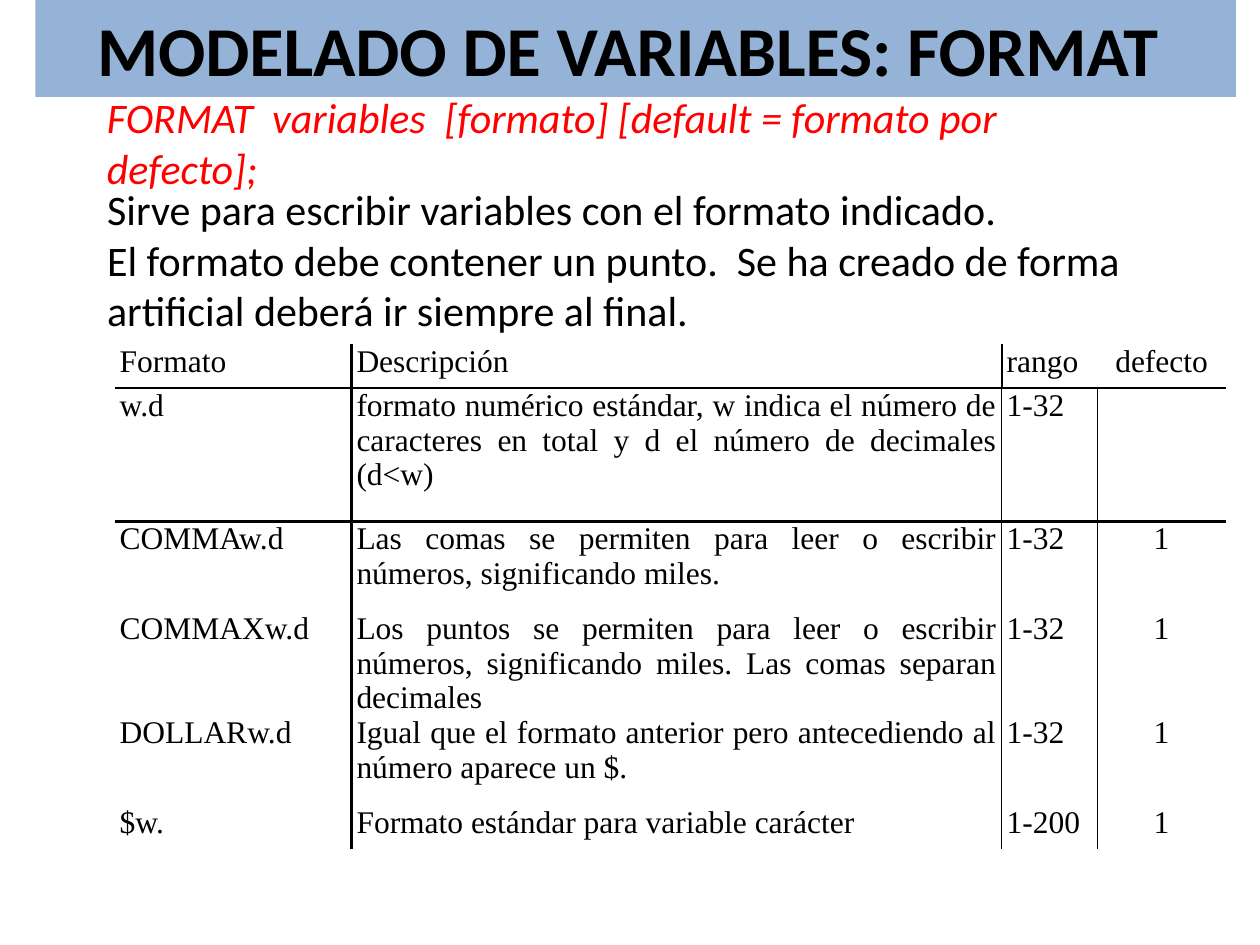
from lxml import etree
from pptx import Presentation
from pptx.dml.color import RGBColor
from pptx.enum import text as t
from pptx.oxml import ns
from pptx.util import Inches, Pt

LEFT, MID, JUST = t.PP_ALIGN.LEFT, t.PP_ALIGN.CENTER, t.PP_ALIGN.JUSTIFY


def write(frame, lines, size=24, font="Calibri", color="000000", bold=False,
          italic=False, align=LEFT, anchor=t.MSO_ANCHOR.TOP):
    frame.word_wrap = True
    frame.auto_size = t.MSO_AUTO_SIZE.NONE
    frame.vertical_anchor = anchor
    for i, line in enumerate(lines):
        par = frame.add_paragraph() if i else frame.paragraphs[0]
        par.alignment = align
        par.space_before = Pt(0)
        run = par.add_run()
        run.text = line
        run.font.size = Pt(size)
        run.font.name = font
        run.font.bold = bold
        run.font.italic = italic
        run.font.color.rgb = RGBColor.from_string(color)


def border(cell, side, width):
    props = cell._tc.get_or_add_tcPr()
    line = etree.SubElement(props, ns.qn("a:ln" + side), w=str(Pt(width)))
    fill = etree.SubElement(line, ns.qn("a:solidFill"))
    etree.SubElement(fill, ns.qn("a:srgbClr"), val="000000")


prs = Presentation()
prs.slide_width, prs.slide_height = Inches(10), Inches(7.5)
slide = prs.slides.add_slide(prs.slide_layouts[1])
title, body = slide.placeholders
usage = slide.shapes.add_textbox(0, 0, 0, 0)

for box, place in [
    (title, (0.28, 0, 9.53, 0.77)),
    (usage, (0.75, 0.68, 8.43, 1.21)),
    (body, (0.75, 1.41, 8.35, 1.31)),
]:
    box.left, box.top, box.width, box.height = map(Inches, place)

title.fill.solid()
title.fill.fore_color.rgb = RGBColor.from_string("95B3D7")
write(title.text_frame, ["MODELADO DE VARIABLES: FORMAT "], size=40, bold=True,
      align=MID, anchor=t.MSO_ANCHOR.MIDDLE)
write(usage.text_frame,
      ["FORMAT  variables  [formato] [default = formato por defecto];"],
      color="FF0000", italic=True)
write(body.text_frame, [
    "Sirve para escribir variables con el formato indicado.",
    "El formato debe contener un punto.  Se ha creado de forma artificial "
    "deberá ir siempre al final.",
])
for par in body.text_frame.paragraphs:
    props = par._p.get_or_add_pPr()
    props.set("marL", "0")
    props.set("indent", "0")
    etree.SubElement(props, ns.qn("a:buNone"))

rows = [
    ("Formato", "Descripción", "rango", "defecto"),
    ("w.d", "formato numérico estándar, w indica el número de caracteres en "
     "total y d el número de decimales (d<w)", "1-32", ""),
    ("COMMAw.d", "Las comas se permiten para leer o escribir números, "
     "significando miles. ", "1-32", "1"),
    ("COMMAXw.d", "Los puntos se permiten para leer o escribir números, "
     "significando miles. Las comas separan decimales ", "1-32", "1"),
    ("DOLLARw.d", "Igual que el formato anterior pero antecediendo al número "
     "aparece un $.", "1-32", "1"),
    ("$w.", "Formato estándar para variable carácter", "1-200", "1"),
]
wides = [1.88, 5.16, 0.76, 1.02]
highs = [0.35, 1.06, 0.71, 0.71, 0.71, 0.35]
frame = slide.shapes.add_table(len(rows), len(wides), Inches(0.91), Inches(2.73),
                               Inches(sum(wides)), Inches(sum(highs)))
table = frame.table
table.first_row = table.horz_banding = False
style = table._tbl.tblPr.find(ns.qn("a:tableStyleId"))
style.text = "{2D5ABB26-0587-4C30-8999-92F81FD0307C}"
for col, wide in zip(table.columns, wides):
    col.width = Inches(wide)

for r, words in enumerate(rows):
    table.rows[r].height = Inches(highs[r])
    for c, word in enumerate(words):
        cell = table.cell(r, c)
        cell.margin_left = cell.margin_right = Inches(0.04)
        cell.margin_top = cell.margin_bottom = 0
        if c == 1:
            border(cell, "L", 1.5)
        if c == 2 and r:
            border(cell, "L", 1)
        if c == 0:
            border(cell, "R", 1.5)
        if c == 1 and r:
            border(cell, "R", 1)
        if r == 1:
            border(cell, "T", 1.5)
        if r == 0:
            border(cell, "B", 1.5)
        cell.fill.background()
        if word:
            write(cell.text_frame, [word], size=18, font="Times New Roman",
                  align=MID if c == 3 else JUST)

prs.save("out.pptx")
